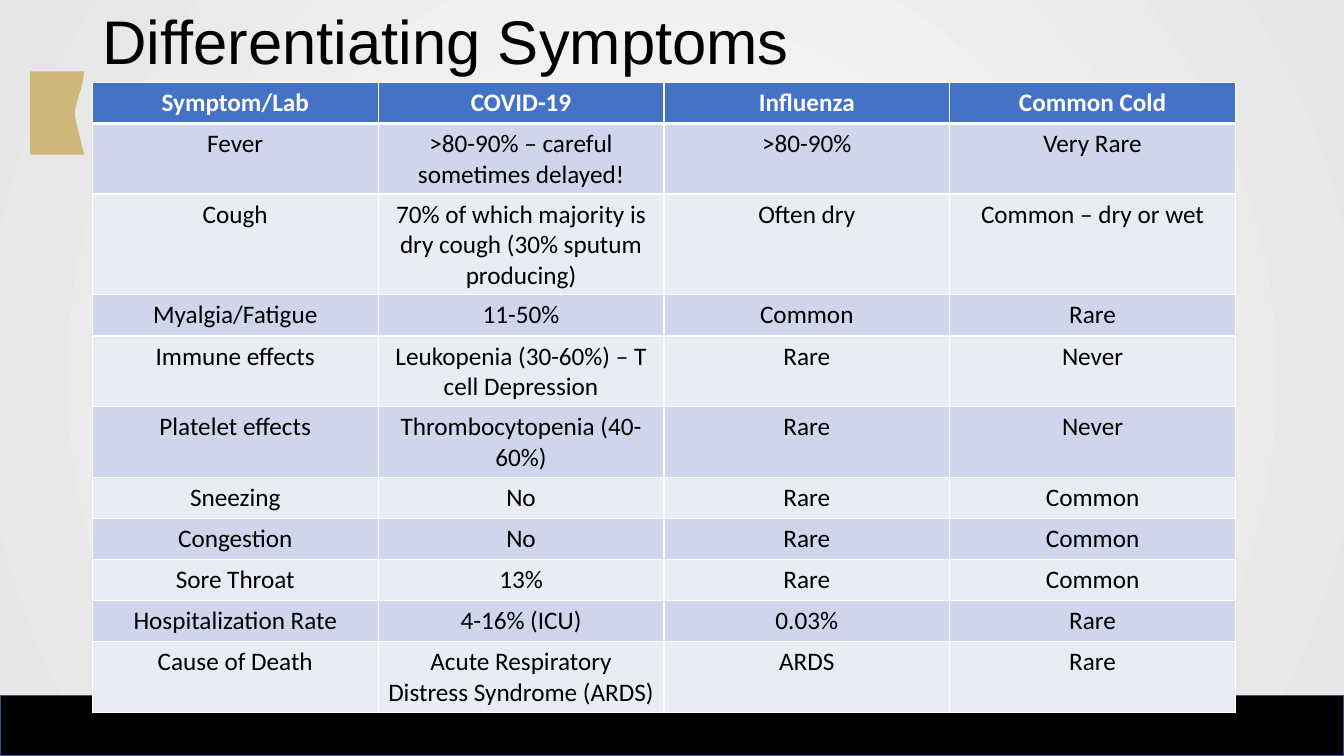
from dataclasses import dataclass

from lxml.etree import SubElement
from pptx import Presentation
from pptx.dml.color import RGBColor
from pptx.enum.shapes import MSO_SHAPE
from pptx.enum.text import MSO_ANCHOR, PP_ALIGN
from pptx.oxml.ns import qn
from pptx.util import Emu, Pt


@dataclass(frozen=True)
class Theme:
    ink: str = "000000"
    paper: str = "FFFFFF"
    gold: str = "CFB87C"
    header: str = "4472C4"
    band_outline: str = "325491"
    stripes: tuple = ("CFD5EA", "E9EBF5")
    glow: tuple = ((0.14, "F7F7F7"), (1.0, "E6E6E6"))
    title_font: str = "Arial"
    table_font: str = "Calibri"
    title_size: int = 44
    table_size: int = 18


GRID_COLUMNS, GRID_ROWS = 16, 9
UNIT = 762000

SYMPTOMS = [
    ("Symptom/Lab", "COVID-19", "Influenza", "Common Cold"),
    ("Fever", ">80-90% – careful sometimes delayed!", ">80-90%", "Very Rare"),
    ("Cough", "70% of which majority is dry cough (30% sputum producing)",
     "Often dry", "Common – dry or wet"),
    ("Myalgia/Fatigue", "11-50%", "Common", "Rare"),
    ("Immune effects", "Leukopenia (30-60%) – T cell Depression", "Rare", "Never"),
    ("Platelet effects", "Thrombocytopenia (40-60%)", "Rare", "Never"),
    ("Sneezing", "No", "Rare", "Common"),
    ("Congestion", "No", "Rare", "Common"),
    ("Sore Throat", "13%", "Rare", "Common"),
    ("Hospitalization Rate", "4-16% (ICU)", "0.03%", "Rare"),
    ("Cause of Death", "Acute Respiratory Distress Syndrome (ARDS)", "ARDS", "Rare"),
]


def grid(*lengths):
    return [Emu(round(length * UNIT)) for length in lengths]


def rgb(color):
    return RGBColor.from_string(color)


def apply(target, formats):
    for name, value in formats.items():
        setattr(target, name, value)


def bezier(start, first, second, end, steps=12):
    for step in range(1, steps + 1):
        t = step / steps
        weights = ((1 - t) ** 3, 3 * t * (1 - t) ** 2, 3 * t * t * (1 - t), t ** 3)
        yield tuple(sum(w * point[axis] for w, point in zip(weights, (start, first, second, end)))
                    for axis in (0, 1))


class SlideBuilder:
    def __init__(self, slide, theme):
        self.slide = slide
        self.theme = theme

    def background(self):
        fill = self.slide.background.fill
        fill.gradient()
        for stop, (position, color) in zip(fill.gradient_stops, self.theme.glow):
            stop.position = position
            stop.color.rgb = rgb(color)
        gradient = next(self.slide.element.iter(qn("a:gradFill")))
        gradient.remove(gradient.find(qn("a:lin")))
        circle = SubElement(gradient, qn("a:path"), {"path": "circle"})
        SubElement(circle, qn("a:fillToRect"), dict.fromkeys("ltrb", "50000"))

    def paint(self, shape, color, outline=None):
        shape.shadow.inherit = False
        shape.fill.solid()
        shape.fill.fore_color.rgb = rgb(color)
        if outline:
            shape.line.color.rgb = rgb(outline)
            shape.line.width = Pt(1)
        else:
            shape.line.fill.background()

    def band(self, left, top, width, height):
        footer = self.slide.shapes.add_shape(MSO_SHAPE.RECTANGLE, *grid(left, top, width, height))
        self.paint(footer, self.theme.ink, self.theme.band_outline)

    def ribbon(self, left, top, right, bottom, notch):
        curve = bezier((right, top), (right, 1.02), (notch[0], 1.22), notch)
        outline = [(right, top), *curve, (right, bottom), (left, bottom)]
        builder = self.slide.shapes.build_freeform(*grid(left, top))
        builder.add_line_segments([grid(*point) for point in outline])
        self.paint(builder.convert_to_shape(), self.theme.gold)

    def set_text(self, paragraph, text, color, font, layout):
        paragraph.text = text
        apply(paragraph, layout)
        apply(paragraph.font, font)
        paragraph.font.color.rgb = rgb(color)

    def title(self, text, left, top, width, height):
        frame = self.slide.shapes.add_textbox(*grid(left, top, width, height)).text_frame
        apply(frame, {"word_wrap": True, "vertical_anchor": MSO_ANCHOR.MIDDLE})
        font = {"name": self.theme.title_font, "size": Pt(self.theme.title_size)}
        self.set_text(frame.paragraphs[0], text, self.theme.ink, font, {"line_spacing": 0.9})

    def borders(self, cell, widths):
        properties = cell._tc.get_or_add_tcPr()
        for side, width in widths.items():
            line = SubElement(properties, qn(f"a:ln{side}"), {"w": str(Pt(width))})
            solid = SubElement(line, qn("a:solidFill"))
            SubElement(solid, qn("a:srgbClr"), {"val": self.theme.paper})

    def table(self, rows, left, top, width, row_height):
        frame = self.slide.shapes.add_table(
            len(rows), len(rows[0]), *grid(left, top, width, row_height * len(rows)))
        for row_index, values in enumerate(rows):
            heading = row_index == 0
            fill = self.theme.header if heading else self.theme.stripes[(row_index - 1) % 2]
            color = self.theme.paper if heading else self.theme.ink
            font = {"name": self.theme.table_font, "size": Pt(self.theme.table_size),
                    "bold": heading}
            for column_index, value in enumerate(values):
                cell = frame.table.cell(row_index, column_index)
                self.set_text(cell.text_frame.paragraphs[0], value, color, font,
                              {"alignment": PP_ALIGN.CENTER})
                self.borders(cell, {"L": 1, "R": 1, "T": 3 if row_index == 1 else 1,
                                    "B": 3 if heading else 1})
                cell.fill.solid()
                cell.fill.fore_color.rgb = rgb(fill)


def main():
    presentation = Presentation()
    width, height = grid(GRID_COLUMNS, GRID_ROWS)
    apply(presentation, {"slide_width": width, "slide_height": height})
    slide = presentation.slides.add_slide(presentation.slide_layouts[6])
    builder = SlideBuilder(slide, Theme())
    builder.background()
    builder.band(0, 8.28, GRID_COLUMNS, 0.72)
    builder.ribbon(0.36, 0.85, 1, 1.84, notch=(0.89, 1.38))
    builder.title("Differentiating Symptoms", 1.1, 0, 13.8, 1.07)
    builder.table(SYMPTOMS, 1.1, 0.98, 13.61, 0.49)
    presentation.save("out.pptx")


if __name__ == "__main__":
    main()
